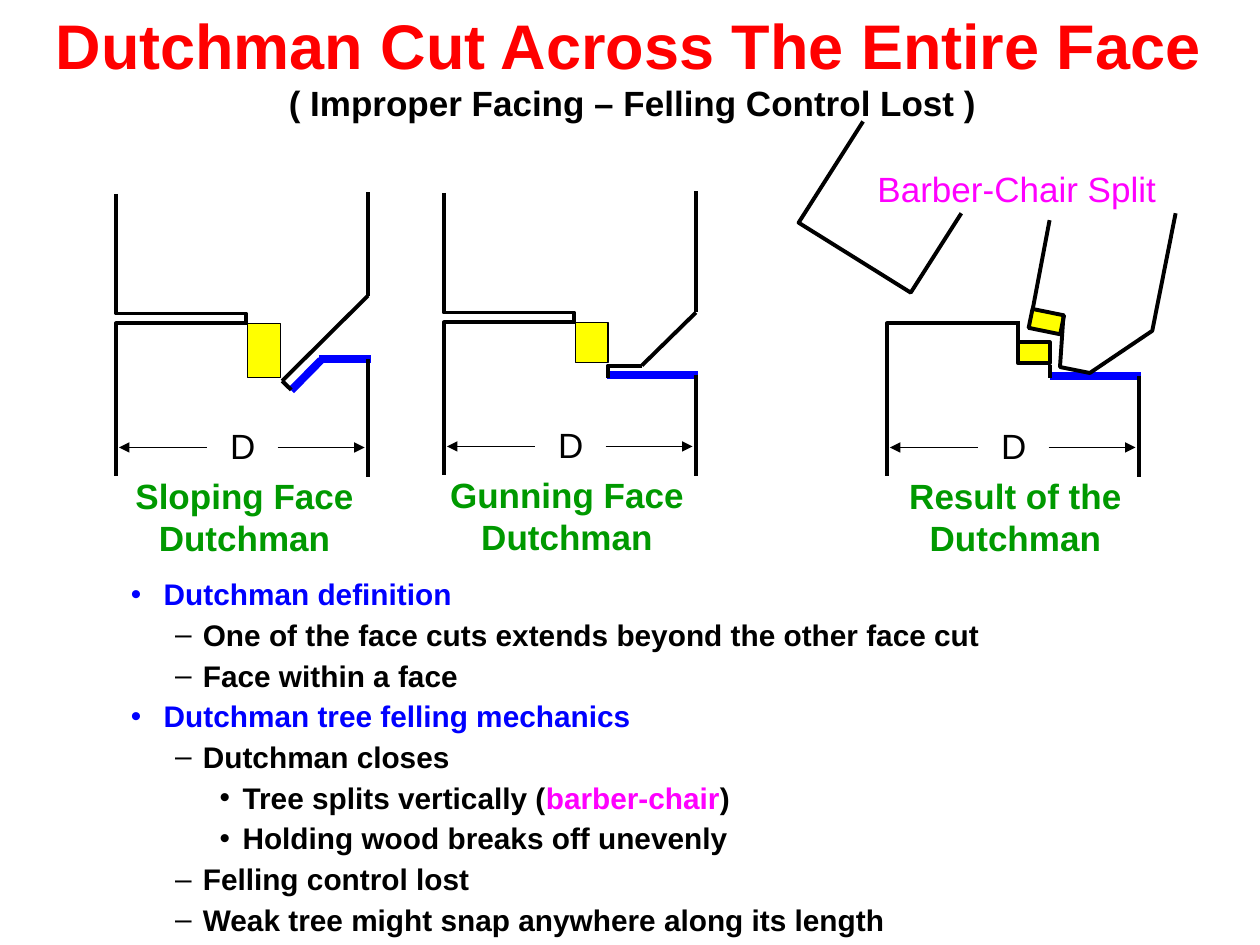
from lxml import etree
from pptx import Presentation
from pptx.dml.color import RGBColor
from pptx.enum.shapes import MSO_CONNECTOR, MSO_SHAPE
from pptx.enum.text import MSO_ANCHOR, MSO_AUTO_SIZE, PP_ALIGN
from pptx.oxml.ns import qn
from pptx.util import Cm, Pt

STRAIGHT = MSO_CONNECTOR.STRAIGHT
RECTANGLE = MSO_SHAPE.RECTANGLE
TOP = MSO_ANCHOR.TOP
NO_FIT = MSO_AUTO_SIZE.NONE
LEFT, CENTER = PP_ALIGN.LEFT, PP_ALIGN.CENTER

FONT = "Arial"
COLORS = {"black": "000000", "red": "FF0000", "blue": "0000FF",
          "green": "009900", "magenta": "FF00FF", "yellow": "FFFF00"}

# Bullet character, left margin and first-line indent of each level
LEVELS = [("•", 0.66, -0.66), ("–", 1.45, -0.56), ("•", 2.25, -0.46)]
NOTES = [
    (0, [("Dutchman definition", "blue")]),
    (1, [("One of the face cuts extends beyond the other face cut", "black")]),
    (1, [("Face within a face", "black")]),
    (0, [("Dutchman tree felling mechanics", "blue")]),
    (1, [("Dutchman closes", "black")]),
    (2, [("Tree splits vertically (", "black"), ("barber-chair", "magenta"),
         (")", "black")]),
    (2, [("Holding wood breaks off unevenly", "black")]),
    (1, [("Felling control lost", "black")]),
    (1, [("Weak tree might snap anywhere along its length", "black")]),
]

# Outlines in cm from the top left corner of a figure
STUMP_LEFT = [(2.72, 2.64), (0.05, 2.64), (0.05, 5.72)]
BOLE_LEFT = [(0.05, 0.03), (0.05, 2.44), (2.67, 2.44), (2.67, 2.64)]
SLOPING_FACE = [(5.13, 2.08), (3.4, 3.8)]
SLOPING_TOE = [(3.4, 3.8), (3.58, 3.98)]
SLOPING_CUTS = [[(3.58, 3.99), (4.18, 3.38)], [(4.14, 3.36), (5.18, 3.36)]]
GUNNING_FACE = [(5.13, 2.44), (4.04, 3.51)]
GUNNING_TOE = [(4.05, 3.51), (3.35, 3.51), (3.35, 3.76)]
FLAT_CUT = [(3.33, 3.7), (5.18, 3.7)]
BROKEN_STUMP = [(2.69, 2.64), (0.05, 2.64), (0.05, 5.72)]
STEPS = [[(3.33, 3.47), (3.33, 3.75)], [(2.69, 2.6), (2.69, 3.02)]]
SPLIT_SIDE = [(3.33, 0.56), (2.99, 2.35)]
TIPPED_BOLE = [(3.61, 2.48), (3.54, 3.52), (4.14, 3.64), (5.4, 2.79), (5.87, 0.42)]
SPLIT_SLAB = [(-0.43, -1.43), (-1.73, 0.61), (0.53, 2.02), (1.55, 0.42)]


def rgb(name):
    return RGBColor.from_string(COLORS[name])


def style_runs(p, size, color, bold=False):
    for r in p.runs:
        r.font.name, r.font.size, r.font.bold = FONT, Pt(size), bold
        r.font.color.rgb = rgb(color)


def prepare_frame(tf):
    tf.word_wrap = True
    tf.auto_size = NO_FIT
    tf.vertical_anchor = TOP
    tf.margin_left = tf.margin_right = tf.margin_top = tf.margin_bottom = 0


def add_text(slide, box, text, color, align=LEFT, bold=False):
    tf = slide.shapes.add_textbox(*map(Cm, box)).text_frame
    prepare_frame(tf)
    p = tf.paragraphs[0]
    p.text = text
    p.alignment = align
    p.line_spacing = Pt(24)
    style_runs(p, 20, color, bold)


def add_stroke(slide, left, top, *outlines, color="black", width=2.25):
    """Draw outlines, in cm from (left, top), as one line or freeform."""
    first, *others = [[(Cm(left + x), Cm(top + y)) for x, y in points]
                      for points in outlines]
    if len(first) == 2 and not others:
        s = slide.shapes.add_connector(STRAIGHT, *first[0], *first[1])
    else:
        builder = slide.shapes.build_freeform(*first[0])
        builder.add_line_segments(first[1:], close=False)
        for points in others:
            builder.move_to(*points[0])
            builder.add_line_segments(points[1:], close=False)
        s = builder.convert_to_shape()
        s.fill.background()
    s.line.color.rgb = rgb(color)
    s.line.width = Pt(width)
    etree.SubElement(s._element.spPr, qn("a:effectLst"))
    return s


def add_holding_wood(slide, left, top, width, height, line=0.75, angle=0):
    s = slide.shapes.add_shape(RECTANGLE, Cm(left), Cm(top), Cm(width), Cm(height))
    s.shadow.inherit = False
    s.fill.solid()
    s.fill.fore_color.rgb = rgb("yellow")
    s.line.color.rgb = rgb("black")
    s.line.width = Pt(line)
    s.rotation = angle


def add_base(slide, left, top, cuts, caption, shift):
    """Draw what every figure shares: cuts, diameter and caption."""
    for cut in cuts:
        add_stroke(slide, left, top, cut, color="blue", width=4.5)
    for start, tip in ((1.88, 0.11), (3.31, 5.06)):
        s = add_stroke(slide, left, top, [(start, 5.14), (tip, 5.14)], width=0.75)
        etree.SubElement(s.line._get_or_add_ln(), qn("a:tailEnd"), type="triangle")
    add_text(slide, (left + 2.35, top + 4.67, 0.58, 0.91), "D", "black")
    add_text(slide, (left + shift, top + 5.69, 5, 1.75), caption, "green", CENTER, True)


def stump_right(cut):
    x, y = 5.13, cut[-1][1]
    return [(x, y), (x, 5.74)]


def add_faced_tree(slide, left, top, face, toe, cuts, wood, caption, shift):
    """Draw a standing tree with its face and back cut."""
    add_stroke(slide, left, top, face, STUMP_LEFT, BOLE_LEFT)
    add_base(slide, left, top, cuts, caption, shift)
    x, y = face[0]
    add_stroke(slide, left, top, [(x, y), (x, 0)], stump_right(cuts[-1]))
    add_stroke(slide, left, top, toe)
    add_holding_wood(slide, left + 2.7, top + 2.64, *wood)


def add_split_tree(slide, left, top):
    """Draw the tree that tips over and splits."""
    add_holding_wood(slide, left + 2.69, top + 3.02, 0.64, 0.42, 2.25)
    add_stroke(slide, left, top, BROKEN_STUMP)
    add_base(slide, left, top, [FLAT_CUT], "Result of the Dutchman", 0.14)
    add_stroke(slide, left, top, stump_right(FLAT_CUT))
    add_stroke(slide, left, top, *STEPS)
    add_holding_wood(slide, left + 2.94, top + 2.41, 0.65, 0.39, 2.25, 11.5)
    add_stroke(slide, left, top, TIPPED_BOLE, SPLIT_SIDE, SPLIT_SLAB)
    add_text(slide, (left - 0.14, top - 0.51, 5.9, 0.91), "Barber-Chair Split", "magenta")


def add_title(slide, left, top, width, height):
    s = slide.shapes.title
    s.left, s.top, s.width, s.height = map(Cm, (left, top, width, height))
    tf = s.text_frame
    prepare_frame(tf)
    tf.text = ("Dutchman Cut Across The Entire Face\n"
               "( Improper Facing – Felling Control Lost )")
    for p, size, color, spacing in zip(tf.paragraphs, (36, 20), ("red", "black"),
                                       (42.9, 23.6)):
        p.alignment = CENTER
        p.space_before = Pt(0)
        p.line_spacing = Pt(spacing)
        style_runs(p, size, color, True)
    p._p.get_or_add_pPr().set("marL", str(Cm(0.17)))


def add_notes_list(slide, left, top, width, height):
    tf = slide.shapes.add_textbox(*map(Cm, (left, top, width, height))).text_frame
    prepare_frame(tf)
    for i, (level, parts) in enumerate(NOTES):
        p = tf.add_paragraph() if i else tf.paragraphs[0]
        p.level = level
        p.line_spacing = Pt(20.4)
        p.space_after = Pt(2.9)
        for text, color in parts:
            r = p.add_run()
            r.text = text
            r.font.name, r.font.size, r.font.bold = FONT, Pt(17), True
            r.font.color.rgb = rgb(color)
        char, margin, indent = LEVELS[level]
        p_pr = p._p.get_or_add_pPr()
        p_pr.set("marL", str(Cm(margin)))
        p_pr.set("indent", str(Cm(indent)))
        etree.SubElement(p_pr, qn("a:buFont"), typeface=FONT)
        etree.SubElement(p_pr, qn("a:buChar"), char=char)


def main():
    prs = Presentation()
    prs.slide_width, prs.slide_height = Cm(25.4), Cm(19.05)
    slide = prs.slides.add_slide(prs.slide_layouts[5])
    add_title(slide, 0.77, 0.15, 23.8, 2.4)
    add_faced_tree(slide, 2.29, 3.88, SLOPING_FACE, SLOPING_TOE, SLOPING_CUTS,
                   (0.67, 1.09), "Sloping Face Dutchman", 0.14)
    add_faced_tree(slide, 8.9, 3.86, GUNNING_FACE, GUNNING_TOE, [FLAT_CUT],
                   (0.66, 0.81), "Gunning Face Dutchman", 0.03)
    add_split_tree(slide, 17.83, 3.88)
    add_notes_list(slide, 2.64, 11.61, 18, 7.4)
    prs.save("out.pptx")


if __name__ == "__main__":
    main()
